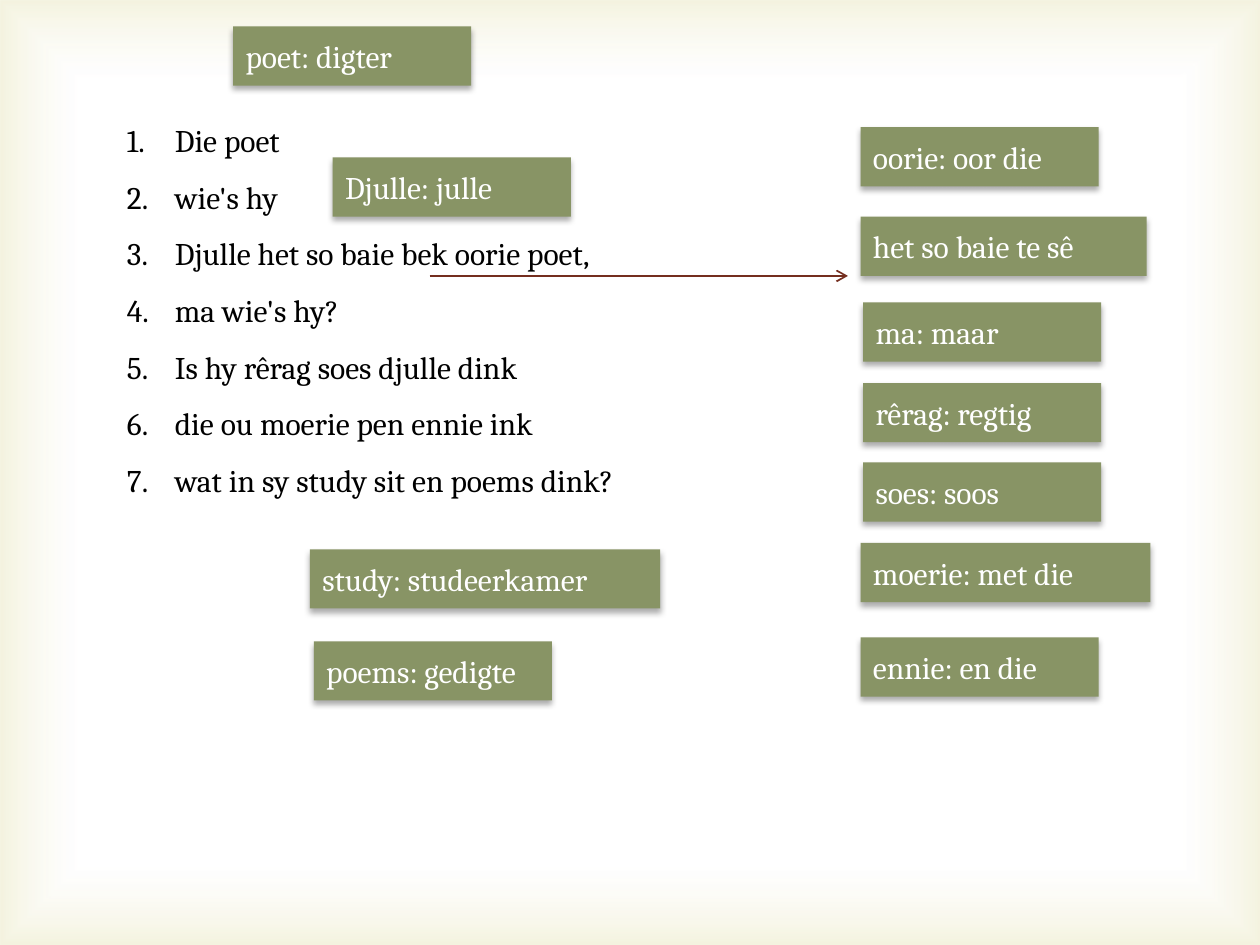
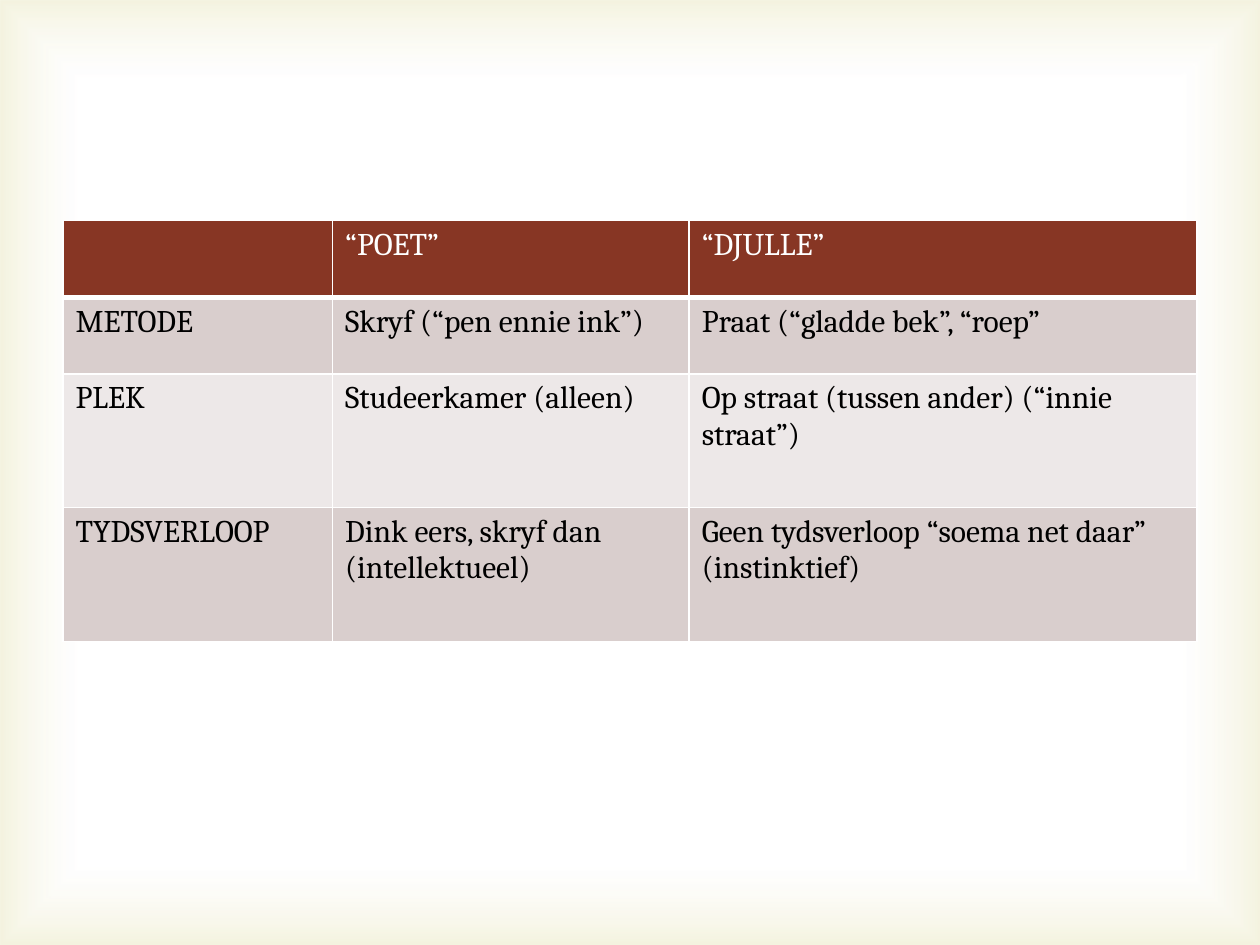
from lxml import etree
from pptx import Presentation
from pptx.dml.color import RGBColor
from pptx.enum.shapes import MSO_CONNECTOR, MSO_SHAPE
from pptx.enum.text import MSO_ANCHOR, MSO_AUTO_SIZE, PP_ALIGN
from pptx.oxml import parse_xml
from pptx.oxml.ns import qn
from pptx.util import Inches, Pt

RECT = MSO_SHAPE.RECTANGLE
LINE = MSO_CONNECTOR.STRAIGHT
MIDDLE = MSO_ANCHOR.MIDDLE
GROW = MSO_AUTO_SIZE.SHAPE_TO_FIT_TEXT
LEFT = PP_ALIGN.LEFT

WHITE = RGBColor(0xFF, 0xFF, 0xFF)
BLACK = RGBColor(0, 0, 0)
SAND = RGBColor(0xD1, 0xCA, 0x75)
OLIVE = RGBColor(0x88, 0x94, 0x65)
RUST = RGBColor(0x87, 0x36, 0x24)
WINE = RGBColor(0x74, 0x2E, 0x1F)
ROSE = RGBColor(0xD9, 0xCE, 0xCD)
PALE = RGBColor(0xED, 0xE8, 0xE8)

COLS, ROWS = 100, 75
NS = 'xmlns:a="http://schemas.openxmlformats.org/drawingml/2006/main"'
GLOW = f"""<a:gradFill {NS} rotWithShape="1"><a:gsLst>
<a:gs pos="83000"><a:srgbClr val="{WHITE}"><a:alpha val="11000"/></a:srgbClr></a:gs>
<a:gs pos="100000"><a:srgbClr val="{SAND}"><a:alpha val="23000"/></a:srgbClr></a:gs>
</a:gsLst><a:path path="rect"><a:fillToRect l="50000" t="50000" r="50000" b="50000"/>
</a:path></a:gradFill>"""
SHADE = f"""<a:outerShdw {NS} blurRad="{Pt(3.5)}" dist="{Pt(2.2)}" dir="5400000" rotWithShape="0">
<a:srgbClr val="{BLACK}"><a:alpha val="32000"/></a:srgbClr></a:outerShdw>"""

POEM = [
    "Die poet",
    "wie's hy",
    "Djulle het so baie bek oorie poet,",
    "ma wie's hy?",
    "Is hy rêrag soes djulle dink",
    "die ou moerie pen ennie ink",
    "wat in sy study sit en poems dink?",
]
TAG_WIDE, TAG_HIGH = 18.9, 4.7
TAGS = [  # column, row, width, text
    (18.5, 2.1, TAG_WIDE, "poet: digter"),
    (26.4, 12.5, TAG_WIDE, "Djulle: julle"),
    (68.3, 10.1, TAG_WIDE, "oorie: oor die"),
    (68.3, 17.2, 22.7, "het so baie te sê"),
    (68.5, 24, TAG_WIDE, "ma: maar"),
    (68.5, 30.4, TAG_WIDE, "rêrag: regtig"),
    (68.5, 36.7, TAG_WIDE, "soes: soos"),
    (68.3, 43.1, 23, "moerie: met die"),
    (68.3, 50.6, TAG_WIDE, "ennie: en die"),
    (24.6, 43.6, 27.8, "study: studeerkamer"),
    (24.9, 50.9, TAG_WIDE, "poems: gedigte"),
]
CELLS = [
    ["", "“POET”", "“DJULLE”"],
    ["METODE", "Skryf (“pen ennie ink”)", "Praat (“gladde bek”, “roep”"],
    ["PLEK", "Studeerkamer (alleen)", "Op straat (tussen ander) (“innie straat”)"],
    ["TYDSVERLOOP", "Dink eers, skryf dan (intellektueel)",
     "Geen tydsverloop “soema net daar” (instinktief)"],
]


class Deck:
    font, size = "Cambria", Pt(18)

    def __init__(self):
        self.prs = Presentation()
        self.prs.slide_width, self.prs.slide_height = Inches(10), Inches(7.5)

    def grid(self, x, y, *rest):
        """Turn alternating columns and rows into lengths."""
        units = self.prs.slide_width / COLS, self.prs.slide_height / ROWS
        return [round(n * units[i % 2]) for i, n in enumerate((x, y, *rest))]

    def page(self):
        self.slide = self.prs.slides.add_slide(self.prs.slide_layouts[6])
        back = self.slide.background.fill
        back.solid()
        back.fore_color.rgb = WHITE
        glow = self.block(0, 0, COLS, ROWS)
        glow._element.spPr.find(qn("a:prstGeom")).addnext(parse_xml(GLOW))

    def block(self, x, y, wide, high):
        """Add a rectangle without line or shadow."""
        shape = self.slide.shapes.add_shape(RECT, *self.grid(x, y, wide, high))
        shape.shadow.inherit = False
        shape.line.fill.background()
        return shape

    def say(self, para, text, color):
        """Add one styled run to a paragraph."""
        para.alignment = LEFT
        run = para.add_run()
        run.text = text
        run.font.name, run.font.size = self.font, self.size
        run.font.color.rgb = color

    def tag(self, x, y, wide, text):
        shape = self.block(x, y, wide, TAG_HIGH)
        shape.fill.solid()
        shape.fill.fore_color.rgb = OLIVE
        shape._element.spPr.find(qn("a:effectLst")).append(parse_xml(SHADE))
        frame = shape.text_frame
        frame.word_wrap, frame.vertical_anchor = True, MIDDLE
        self.say(frame.paragraphs[0], text, WHITE)

    def verse(self, x, y, wide, high, lines):
        """Add a numbered list."""
        frame = self.slide.shapes.add_textbox(*self.grid(x, y, wide, high)).text_frame
        frame.word_wrap, frame.auto_size = True, GROW
        for i, text in enumerate(lines):
            para = frame.add_paragraph() if i else frame.paragraphs[0]
            para.line_spacing = 1.5
            self.say(para, text, BLACK)
            props = para._p.get_or_add_pPr()
            props.set("marL", str(Inches(0.38)))
            props.set("indent", str(-Inches(0.38)))
            etree.SubElement(props, qn("a:buFont"), typeface="+mj-lt")
            etree.SubElement(props, qn("a:buAutoNum"), type="arabicPeriod")

    def arrow(self, x1, y1, x2, y2):
        link = self.slide.shapes.add_connector(LINE, *self.grid(x1, y1, x2, y2))
        link.line.color.rgb, link.line.width = WINE, Pt(1)
        props = link._element.spPr
        etree.SubElement(props.find(qn("a:ln")), qn("a:tailEnd"), type="arrow")
        etree.SubElement(props, qn("a:effectLst"))

    def edge(self, cell, base):
        """Draw white cell borders, the lower one of the given width."""
        props = cell._tc.get_or_add_tcPr()
        for side in "LRTB":
            width = Pt(base if side == "B" else 1)
            props.append(parse_xml(
                f'<a:ln{side} {NS} w="{width}"><a:solidFill><a:srgbClr val="{WHITE}"/>'
                f'</a:solidFill></a:ln{side}>'))

    def table(self, x, y, wides, highs, cells):
        spot = self.grid(x, y, sum(wides), sum(highs))
        table = self.slide.shapes.add_table(len(highs), len(wides), *spot).table
        table.first_row = table.horz_banding = False
        for col, wide in zip(table.columns, wides):
            col.width = self.grid(wide, 0)[0]
        for i, (row, high) in enumerate(zip(table.rows, highs)):
            row.height = self.grid(0, high)[1]
            fill = (ROSE if i % 2 else PALE) if i else RUST
            for cell, text in zip(row.cells, cells[i]):
                self.edge(cell, 1 if i else 3)
                cell.fill.solid()
                cell.fill.fore_color.rgb = fill
                if text:
                    self.say(cell.text_frame.paragraphs[0], text, BLACK if i else WHITE)


def main():
    deck = Deck()
    deck.page()
    deck.verse(9.1, 7.6, 50, 32.8, POEM)
    for tag in TAGS:
        deck.tag(*tag)
    deck.arrow(34.1, 21.9, 67.3, 21.9)

    deck.page()
    deck.table(5, 17.5, [21.4, 28.3, 40.3], [6.1, 6.1, 10.6, 10.6], CELLS)
    deck.prs.save("out.pptx")


if __name__ == "__main__":
    main()
